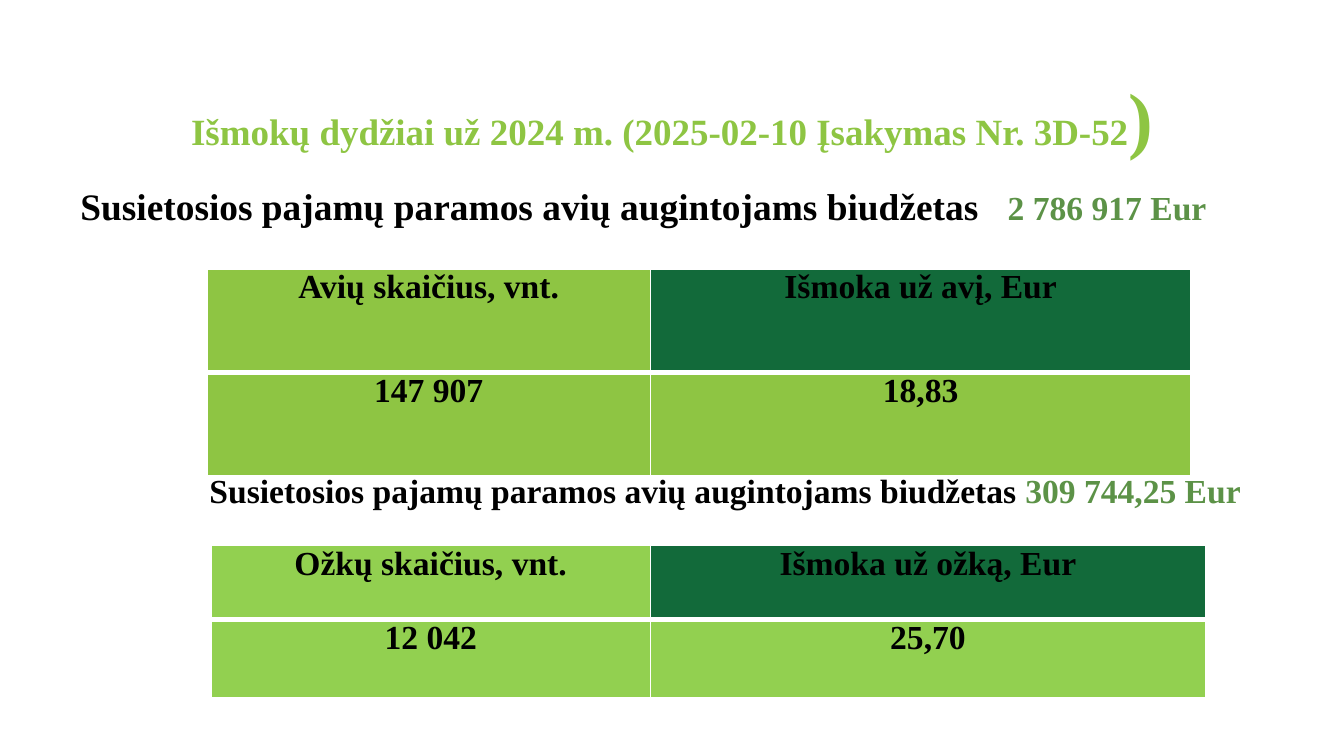
from dataclasses import dataclass

from lxml import etree
from pptx import Presentation
from pptx.dml.color import RGBColor
from pptx.enum.text import MSO_ANCHOR, PP_ALIGN
from pptx.oxml.ns import qn
from pptx.util import Inches, Pt

CENTER = PP_ALIGN.CENTER
LEFT = PP_ALIGN.LEFT
TOP = MSO_ANCHOR.TOP
BOTTOM = MSO_ANCHOR.BOTTOM


@dataclass(frozen=True)
class Theme:
    font: str = "Times New Roman"
    lime: str = "8EC543"
    bright: str = "92D050"
    forest: str = "126A3A"
    moss: str = "5C9247"
    black: str = "000000"
    white: str = "FFFFFF"
    title: float = 19.8
    bracket: float = 39.6
    lead: float = 20
    body: float = 18
    thin: float = 1
    thick: float = 3


THEME = Theme()


def set_attributes(target, values):
    for name, value in values.items():
        setattr(target, name, value)


def add_spans(para, spans):
    for text, size, color in spans:
        span = para.add_run()
        span.text = text
        set_attributes(span.font, {"name": THEME.font, "size": Pt(size), "bold": True})
        span.font.color.rgb = RGBColor.from_string(color)


def add_text(page, place, spans, align=LEFT, anchor=TOP, **margins):
    box = page.shapes.add_textbox(*map(Inches, place))
    frame = box.text_frame
    set_attributes(frame, {"word_wrap": True, "vertical_anchor": anchor})
    set_attributes(frame, {name: Inches(value) for name, value in margins.items()})
    para = frame.paragraphs[0]
    para.alignment = align
    add_spans(para, spans)
    return para


def add_tab_stop(para, position):
    stops = etree.SubElement(para._p.get_or_add_pPr(), qn("a:tabLst"))
    etree.SubElement(stops, qn("a:tab"), pos=str(Inches(position)), algn="l")


def set_borders(cell, widths):
    properties = cell._tc.get_or_add_tcPr()
    for index, (side, width) in enumerate(widths.items()):
        line = etree.Element(qn(f"a:ln{side}"), w=str(Pt(width)))
        fill = etree.SubElement(line, qn("a:solidFill"))
        etree.SubElement(fill, qn("a:srgbClr"), val=THEME.white)
        properties.insert(index, line)


def fill_cell(cell, text, color, is_header):
    cell.fill.solid()
    cell.fill.fore_color.rgb = RGBColor.from_string(color)
    set_attributes(cell, {
        "margin_left": Inches(0.07), "margin_right": Inches(0.07),
        "margin_top": 0, "margin_bottom": 0, "vertical_anchor": TOP,
    })
    para = cell.text_frame.paragraphs[0]
    para.alignment = CENTER
    add_spans(para, [(text, THEME.body, THEME.black)])
    set_borders(cell, {
        "L": THEME.thin,
        "R": THEME.thin,
        "T": THEME.thin if is_header else THEME.thick,
        "B": THEME.thick if is_header else THEME.thin,
    })


def add_payment_table(page, left, top, widths, heights, rows, color):
    frame = page.shapes.add_table(
        len(rows), len(widths), Inches(left), Inches(top),
        Inches(sum(widths)), Inches(sum(heights)),
    )
    table = frame.table
    set_attributes(table, {"first_row": False, "horz_banding": False})
    for column, width in zip(table.columns, widths):
        column.width = Inches(width)
    for row, height in zip(table.rows, heights):
        row.height = Inches(height)
    for row_index, texts in enumerate(rows):
        for column_index, text in enumerate(texts):
            is_header = row_index == 0
            shade = THEME.forest if is_header and column_index == 1 else color
            fill_cell(table.cell(row_index, column_index), text, shade, is_header)


def main():
    deck = Presentation()
    set_attributes(deck, {"slide_width": Inches(10), "slide_height": Inches(10 * 9 / 16)})
    page = deck.slides.add_slide(deck.slide_layouts[6])

    add_text(page, (0.5, 0.25, 9, 0.94), [
        ("Išmokų dydžiai už 2024 m. (2025-02-10 Įsakymas Nr. 3D-52", THEME.title, THEME.lime),
        (")", THEME.bracket, THEME.lime),
    ], align=CENTER, anchor=BOTTOM, margin_bottom=0)

    budget = "Susietosios pajamų paramos avių augintojams biudžetas"
    sheep_budget = add_text(page, (0.5, 1.31, 9, 3.71), [
        (f"{budget}\t", THEME.lead, THEME.black),
        ("2 786 917 Eur", THEME.body, THEME.moss),
    ])
    add_tab_stop(sheep_budget, 6.9)

    add_payment_table(page, 1.54, 2, (3.3, 4.02), (0.77, 0.77), (
        ("Avių skaičius, vnt.", "Išmoka už avį, Eur"),
        ("147 907", "18,83"),
    ), THEME.lime)
    add_payment_table(page, 1.57, 4.06, (3.27, 4.13), (0.55, 0.58), (
        ("Ožkų skaičius, vnt.", "Išmoka už ožką, Eur"),
        ("12 042", "25,70"),
    ), THEME.bright)

    add_text(page, (1.46, 3.45, 7.89, 0.4), [
        (f"{budget} ", THEME.body, THEME.black),
        ("309 744,25 Eur", THEME.body, THEME.moss),
    ])

    deck.save("out.pptx")


if __name__ == "__main__":
    main()
